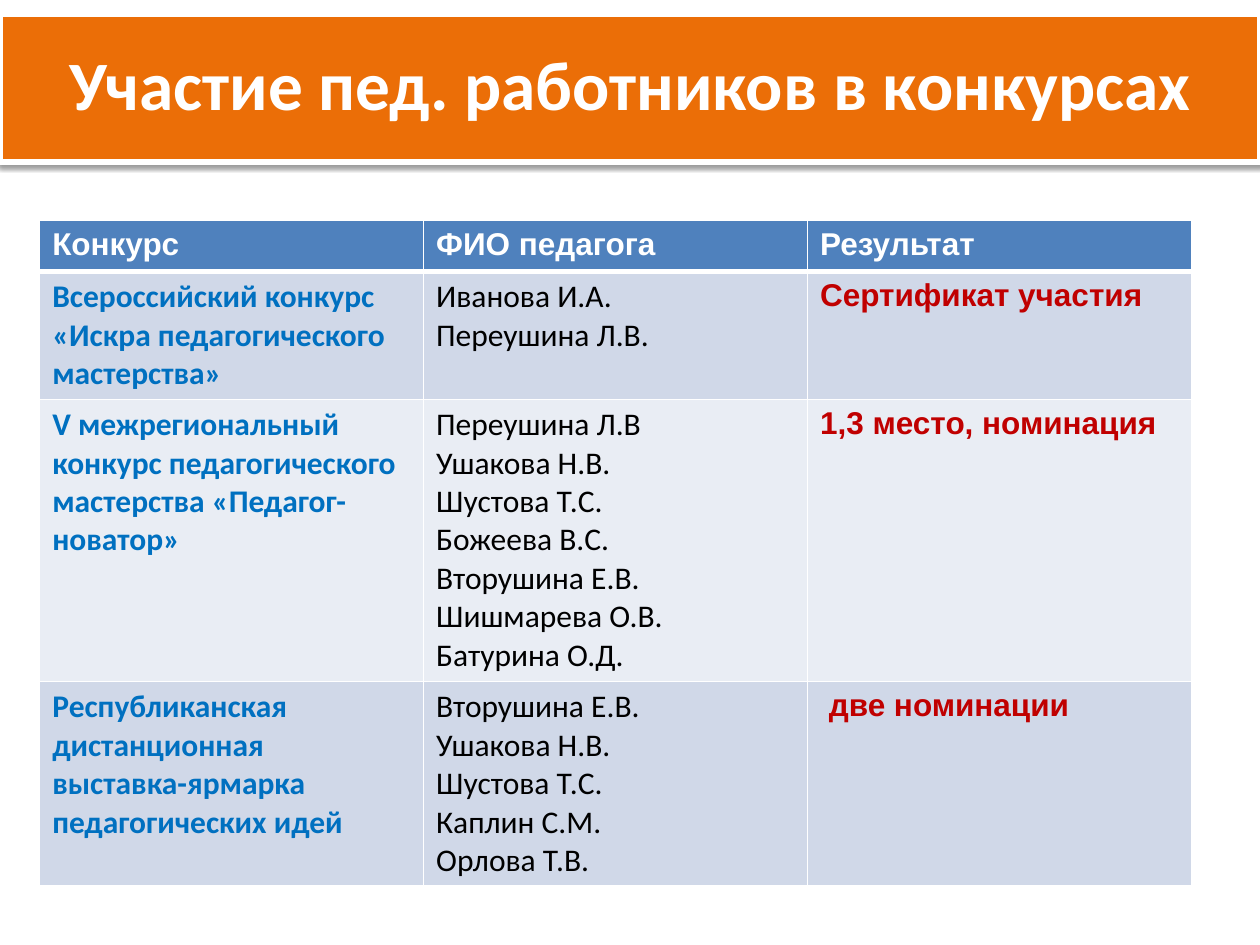
import pptx
import pptx.dml.color
import pptx.enum.shapes
import pptx.enum.text
import pptx.oxml
import pptx.oxml.ns
import pptx.util

Cm = pptx.util.Cm
Pt = pptx.util.Pt

HUES = {
    "orange": "EB6E07",
    "white": "FFFFFF",
    "black": "000000",
    "head": "4F81BD",
    "dark": "D0D8E8",
    "light": "E9EDF4",
    "blue": "0070C0",
    "red": "C00000",
}

HEADS = ["Конкурс", "ФИО педагога", "Результат"]
ROWS = [
    (
        "Всероссийский конкурс «Искра педагогического мастерства»",
        ["Иванова И.А.", "Переушина Л.В."],
        "Сертификат участия",
    ),
    (
        "V межрегиональный конкурс педагогического мастерства «Педагог-новатор»",
        ["Переушина Л.В", "Ушакова Н.В.", "Шустова Т.С.", "Божеева В.С.",
         "Вторушина Е.В.", "Шишмарева О.В.", "Батурина О.Д."],
        "1,3 место, номинация",
    ),
    (
        "Республиканская дистанционная\nвыставка-ярмарка педагогических идей",
        ["Вторушина Е.В.", "Ушакова Н.В.", "Шустова Т.С.", "Каплин С.М.",
         "Орлова Т.В."],
        "две номинации",
    ),
]
HIGHS = [1.02, 2.58, 5.69, 4.11]


def tint(name):
    return pptx.dml.color.RGBColor.from_string(HUES[name])


def write(frame, lines, size, face, hue, bold):
    for i, line in enumerate(lines):
        para = frame.paragraphs[0] if i == 0 else frame.add_paragraph()
        for j, part in enumerate(line.split("\n")):
            if j:
                para.add_line_break()
            run = para.add_run()
            run.text = part
            run.font.size = Pt(size)
            run.font.name = face
            run.font.bold = bold
            run.font.color.rgb = tint(hue)


def shade(shape):
    space = pptx.oxml.ns.nsdecls("a")
    shape._element.spPr.append(pptx.oxml.parse_xml(
        f'<a:effectLst {space}><a:outerShdw blurRad="{Pt(3.1)}" '
        f'dist="{Pt(1.6)}" dir="5400000" rotWithShape="0">'
        f'<a:srgbClr val="{HUES["black"]}"><a:alpha val="38000"/></a:srgbClr>'
        '</a:outerShdw></a:effectLst>'))


def edge(cell, sides):
    props = cell._tc.get_or_add_tcPr()
    space = pptx.oxml.ns.nsdecls("a")
    for side, width in sides.items():
        props.append(pptx.oxml.parse_xml(
            f'<a:ln{side} {space} w="{Pt(width)}"><a:solidFill>'
            f'<a:srgbClr val="{HUES["white"]}"/></a:solidFill></a:ln{side}>'))


def banner(slide, left, top, width, height):
    band = slide.shapes.add_shape(
        pptx.enum.shapes.MSO_SHAPE.RECTANGLE,
        Cm(left), Cm(top + 0.15), Cm(width), Cm(height - 0.08))
    band.fill.solid()
    band.fill.fore_color.rgb = tint("orange")
    band.line.color.rgb = tint("white")
    band.line.width = Pt(3)
    shade(band)
    box = slide.shapes.add_textbox(Cm(left), Cm(top), Cm(width), Cm(height))
    frame = box.text_frame
    frame.word_wrap = True
    frame.vertical_anchor = pptx.enum.text.MSO_ANCHOR.MIDDLE
    write(frame, ["Участие пед. работников в конкурсах"],
          39.6, "Calibri", "white", True)
    frame.paragraphs[0].alignment = pptx.enum.text.PP_ALIGN.CENTER


def fill(cell, lines, back, face, hue, bold, sides):
    edge(cell, sides)
    cell.fill.solid()
    cell.fill.fore_color.rgb = tint(back)
    write(cell.text_frame, lines, 18, face, hue, bold)


def grid(slide, left, top, width):
    table = slide.shapes.add_table(
        len(ROWS) + 1, len(HEADS),
        Cm(left), Cm(top), Cm(width), Cm(sum(HIGHS))).table
    for col in table.columns:
        col.width = Cm(width / len(HEADS))
    for row, high in zip(table.rows, HIGHS):
        row.height = Cm(high)
    for c, text in enumerate(HEADS):
        fill(table.cell(0, c), [text], "head", "Arial", "white", True,
             {"L": 1, "R": 1, "T": 1, "B": 3})
    for r, (name, staff, prize) in enumerate(ROWS, 1):
        back = "dark" if r % 2 else "light"
        sides = {"L": 1, "R": 1, "T": 3 if r == 1 else 1, "B": 1}
        fill(table.cell(r, 0), [name], back, "Calibri", "blue", True, sides)
        fill(table.cell(r, 1), staff, back, "Calibri", "black", False, sides)
        fill(table.cell(r, 2), [prize], back, "Arial", "red", True, sides)
    table.cell(len(ROWS), 2).margin_left = Cm(0.43)


def main():
    deck = pptx.Presentation()
    deck.slide_width = Cm(25.4)
    deck.slide_height = Cm(19.05)
    slide = deck.slides.add_slide(deck.slide_layouts[6])
    banner(slide, 0, 0.15, 25.4, 3.05)
    grid(slide, 0.8, 4.45, 23.22)
    deck.save("out.pptx")


if __name__ == "__main__":
    main()
